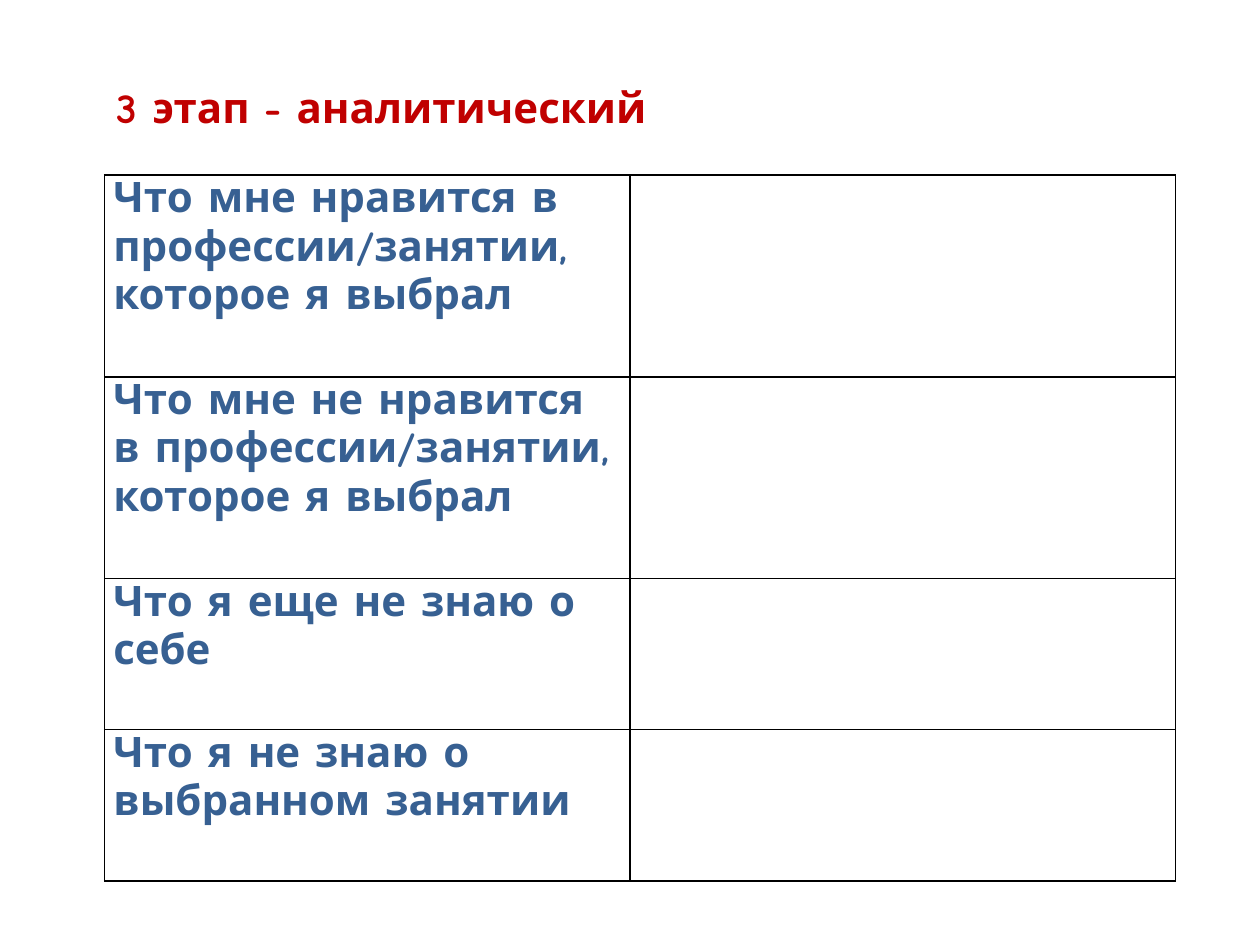
from lxml import etree
from pptx import Presentation
from pptx.dml.color import RGBColor
from pptx.oxml.ns import qn
from pptx.util import Inches, Pt

FONT = "Comic Neue"
QUESTIONS = [
    ("Что мне нравится в профессии/занятии, которое я выбрал", 1.6),
    ("Что мне не нравится в профессии/занятии, которое я выбрал", 1.6),
    ("Что я еще не знаю о себе", 1.2),
    ("Что я не знаю о выбранном занятии", 1.2),
]
COLUMN_WIDTHS = [4.17, 4.33]


def set_color(color_format, value):
    """Give a font or fill colour a hex value."""
    color_format.rgb = RGBColor.from_string(value)


def add_run(paragraph, content, color):
    """Add one bold 24-point run to a paragraph."""
    run = paragraph.add_run()
    run.text = content
    run.font.name = FONT
    run.font.size = Pt(24)
    run.font.bold = True
    set_color(run.font.color, color)


def add_borders(cell, color):
    """Draw a one-point line on every side of a cell."""
    properties = cell._tc.get_or_add_tcPr()
    for side in ("lnL", "lnR", "lnT", "lnB"):
        line = etree.SubElement(properties, qn(f"a:{side}"), w=str(Pt(1)))
        fill = etree.SubElement(line, qn("a:solidFill"))
        etree.SubElement(fill, qn("a:srgbClr"), val=color)


def format_cell(cell):
    """Set the margins, borders and fill of a cell."""
    cell.margin_left = cell.margin_right = Inches(0.07)
    cell.margin_top = cell.margin_bottom = 0
    add_borders(cell, "000000")
    cell.fill.background()


def add_title(slide, content):
    """Add the heading of the stage."""
    box = slide.shapes.add_textbox(Inches(0.83), Inches(0.6), Inches(5.28), Inches(0.5))
    box.text_frame.word_wrap = True
    add_run(box.text_frame.paragraphs[0], content, "C00000")


def add_question_table(slide):
    """Add the table of questions with an empty answer column."""
    height = sum(row_height for _, row_height in QUESTIONS)
    table = slide.shapes.add_table(
        len(QUESTIONS), len(COLUMN_WIDTHS),
        Inches(0.83), Inches(1.39), Inches(sum(COLUMN_WIDTHS)), Inches(height),
    ).table
    table.first_row = table.horz_banding = False
    for column, width in zip(table.columns, COLUMN_WIDTHS):
        column.width = Inches(width)
    for row, (question, row_height) in zip(table.rows, QUESTIONS):
        row.height = Inches(row_height)
        for cell in row.cells:
            format_cell(cell)
        add_run(row.cells[0].text_frame.paragraphs[0], question, "376092")


def main():
    """Build and save the slide."""
    presentation = Presentation()
    presentation.slide_width = Inches(10)
    presentation.slide_height = Inches(7.5)
    slide = presentation.slides.add_slide(presentation.slide_layouts[6])
    add_question_table(slide)
    add_title(slide, "3 этап - аналитический")
    presentation.save("out.pptx")


if __name__ == "__main__":
    main()
